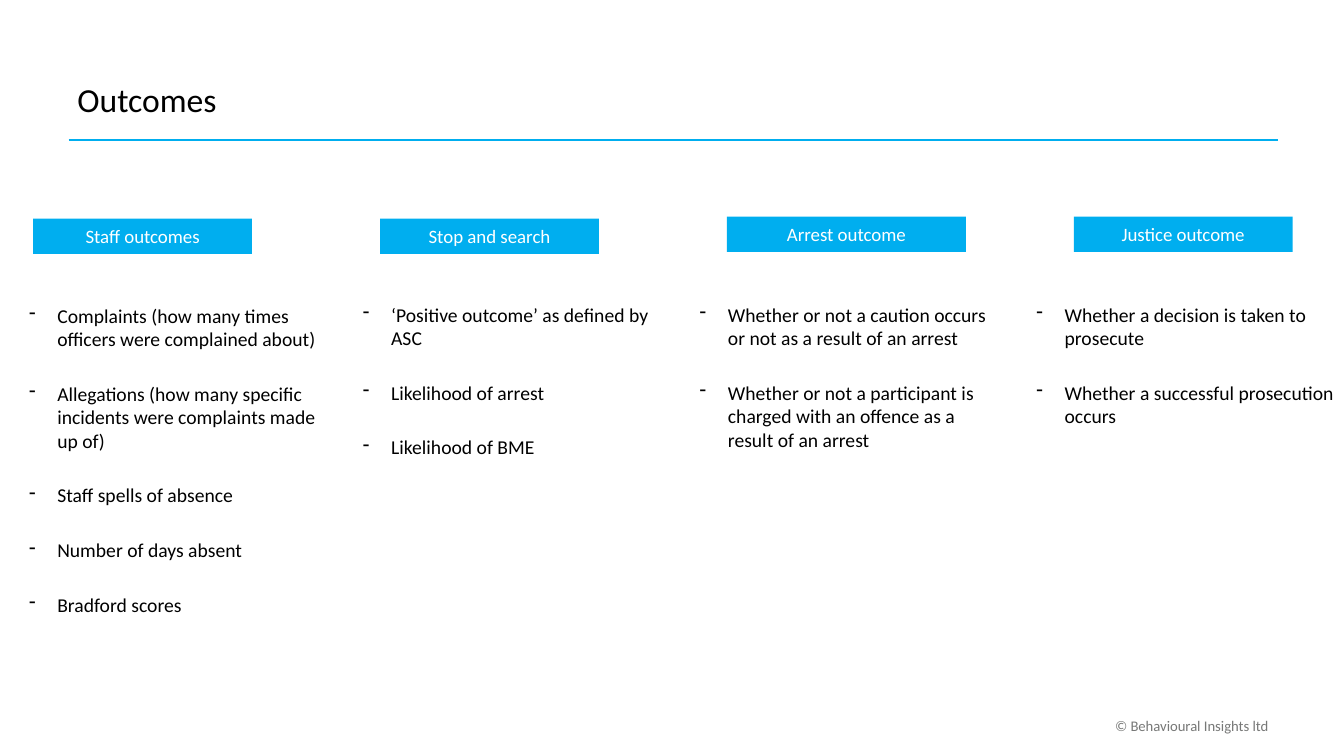
"""Build the Outcomes slide with four headed bullet columns."""
from dataclasses import dataclass

from lxml import etree
from pptx import Presentation
from pptx.dml.color import RGBColor
from pptx.enum.shapes import MSO_CONNECTOR, MSO_SHAPE
from pptx.enum.text import MSO_ANCHOR, PP_ALIGN
from pptx.oxml.ns import qn
from pptx.shapes.autoshape import Shape
from pptx.slide import Slide
from pptx.text.text import _Paragraph
from pptx.util import Inches, Pt

LEFT, CENTER, RIGHT = PP_ALIGN.LEFT, PP_ALIGN.CENTER, PP_ALIGN.RIGHT
TOP, MIDDLE, BOTTOM = MSO_ANCHOR.TOP, MSO_ANCHOR.MIDDLE, MSO_ANCHOR.BOTTOM
RECTANGLE = MSO_SHAPE.RECTANGLE
STRAIGHT = MSO_CONNECTOR.STRAIGHT

BLUE = RGBColor(0x00, 0xAE, 0xEF)
BLACK = RGBColor(0x00, 0x00, 0x00)
WHITE = RGBColor(0xFF, 0xFF, 0xFF)
GRAY = RGBColor(0x77, 0x78, 0x77)
FONT = "Calibri"

HEADER_LEFT, HEADER_PITCH = 0.33, 3.44
LIST_LEFT, LIST_PITCH = 0.19, 3.34
BULLET_INDENT = 0.28
BULLET_GAP = 22.2


@dataclass(frozen=True)
class Column:
    header: str
    bullets: tuple[str, ...]
    header_top: float = 2.15
    header_width: float = 2.17
    side_inset: float = 0.07
    top_inset: float = 0.31


COLUMNS = (
    Column(
        "Staff outcomes",
        (
            "Complaints (how many times officers were complained about)",
            "Allegations (how many specific incidents were complaints made up of)",
            "Staff spells of absence",
            "Number of days absent",
            "Bradford scores",
        ),
        header_top=2.17,
        side_inset=0.1,
        top_inset=0.32,
    ),
    Column(
        "Stop and search",
        (
            "‘Positive outcome’ as defined by ASC",
            "Likelihood of arrest",
            "Likelihood of BME",
        ),
        header_top=2.17,
    ),
    Column(
        "Arrest outcome",
        (
            "Whether or not a caution occurs or not as a result of an arrest",
            "Whether or not a participant is charged with an offence as a result of an arrest",
        ),
        header_width=2.37,
    ),
    Column(
        "Justice outcome",
        (
            "Whether a decision is taken to prosecute",
            "Whether a successful prosecution occurs",
        ),
    ),
)


def add_dash(paragraph: _Paragraph) -> None:
    properties = paragraph._p.get_or_add_pPr()
    properties.set("marL", str(Inches(BULLET_INDENT)))
    properties.set("indent", str(-Inches(BULLET_INDENT)))
    etree.SubElement(properties, qn("a:buChar")).set("char", "-")


def write_text(
    shape: Shape,
    *lines: str,
    size: float,
    color: RGBColor = BLACK,
    align: PP_ALIGN = LEFT,
    anchor: MSO_ANCHOR = TOP,
    bulleted: bool = False,
    side_inset: float = 0.1,
    top_inset: float = 0.05,
) -> None:
    frame = shape.text_frame
    frame.word_wrap = True
    frame.vertical_anchor = anchor
    frame.margin_left = frame.margin_right = Inches(side_inset)
    frame.margin_top = Inches(top_inset)
    for index, line in enumerate(lines):
        paragraph = frame.add_paragraph() if index else frame.paragraphs[0]
        paragraph.text = line
        if bulleted:
            add_dash(paragraph)
        if index:
            paragraph.space_before = Pt(BULLET_GAP)
        paragraph.alignment = align
        font = paragraph.font
        font.name, font.size = FONT, Pt(size)
        font.color.rgb = color


def add_text_box(slide: Slide, left: float, top: float, width: float, height: float) -> Shape:
    return slide.shapes.add_textbox(Inches(left), Inches(top), Inches(width), Inches(height))


def add_title_rule(slide: Slide) -> None:
    rule = slide.shapes.add_connector(
        STRAIGHT, Inches(0.68), Inches(1.39), Inches(12.68), Inches(1.39)
    )
    rule.line.color.rgb = BLUE
    rule.line.width = Pt(1.5)
    etree.SubElement(rule._element.spPr, qn("a:effectLst"))


def add_bullet_list(slide: Slide, column: Column, index: int) -> None:
    box = add_text_box(slide, LIST_LEFT + index * LIST_PITCH, 2.69, 3.1, 4.58)
    write_text(
        box,
        *column.bullets,
        size=14,
        bulleted=True,
        side_inset=column.side_inset,
        top_inset=column.top_inset,
    )


def add_header(slide: Slide, column: Column, index: int) -> None:
    header = slide.shapes.add_shape(
        RECTANGLE,
        Inches(HEADER_LEFT + index * HEADER_PITCH),
        Inches(column.header_top),
        Inches(column.header_width),
        Inches(0.35),
    )
    header.shadow.inherit = False
    header.fill.solid()
    header.fill.fore_color.rgb = BLUE
    header.line.fill.background()
    write_text(header, column.header, size=13.5, color=WHITE, align=CENTER, anchor=MIDDLE)


def main() -> None:
    presentation = Presentation()
    presentation.slide_width = Inches(13.33)
    presentation.slide_height = Inches(7.5)
    slide = presentation.slides.add_slide(presentation.slide_layouts[6])

    copyright_box = add_text_box(slide, 8.4, 7.06, 4.28, 0.28)
    write_text(copyright_box, "© Behavioural Insights ltd", size=10.5, color=GRAY, align=RIGHT)
    add_title_rule(slide)
    title = add_text_box(slide, 0.67, 0.3, 9.39, 0.93)
    write_text(title, "Outcomes", size=24, anchor=BOTTOM)

    for index, column in enumerate(COLUMNS):
        add_bullet_list(slide, column, index)
        add_header(slide, column, index)
    presentation.save("out.pptx")


if __name__ == "__main__":
    main()
